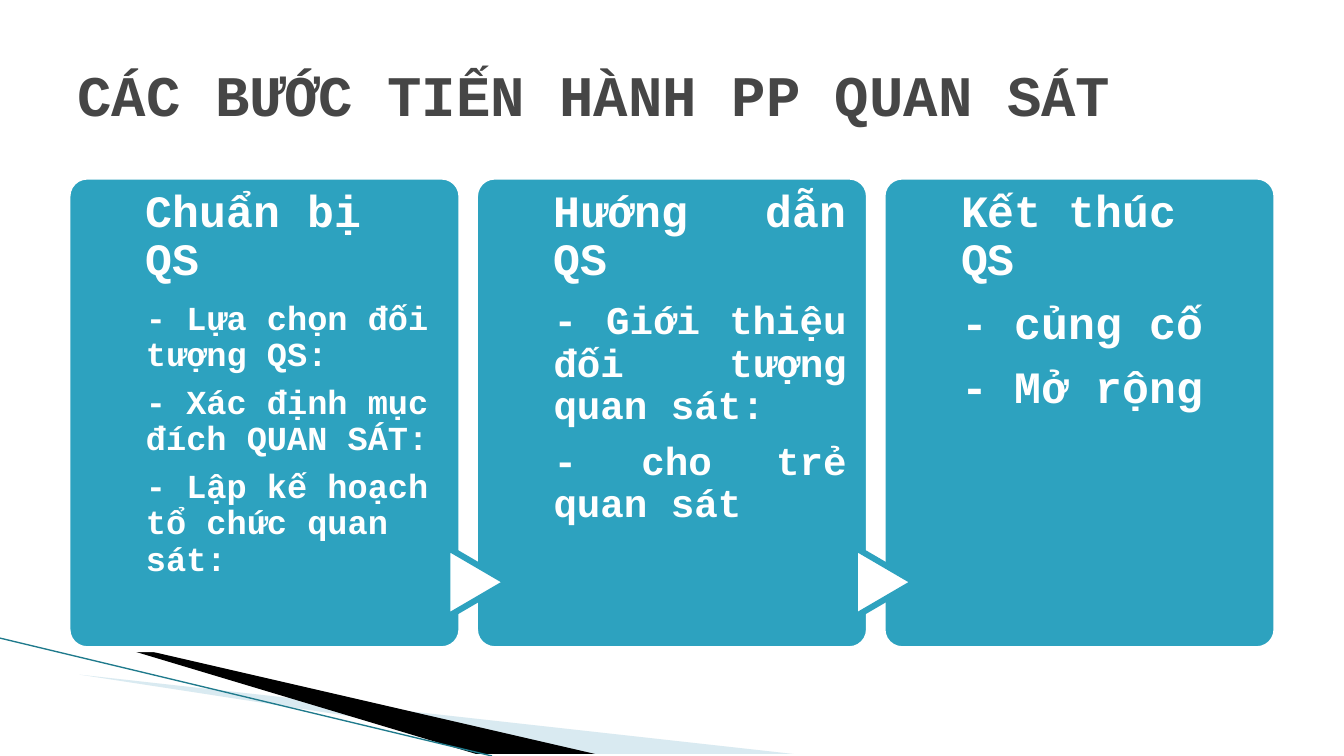
from dataclasses import dataclass
from typing import Optional

from lxml.etree import SubElement
from pptx import Presentation
from pptx.dml.color import RGBColor
from pptx.enum.shapes import MSO_CONNECTOR, MSO_SHAPE
from pptx.enum.text import MSO_ANCHOR, MSO_AUTO_SIZE, PP_ALIGN
from pptx.oxml.ns import qn
from pptx.util import Cm, Pt

FONT = "Courier New"
TEAL, WHITE, GREY = "2DA2BF", "FFFFFF", "464646"
CARD_LEFT, CARD_TOP, CARD_W, CARD_H = 1.7, 4.45, 9.93, 11.91
CARD_PITCH = 10.27


@dataclass
class Step:
    heading: str
    items: list[str]
    item_size: int
    align: PP_ALIGN = PP_ALIGN.LEFT


@dataclass
class Swoosh:
    points: list[tuple[float, float]]
    color: str
    opacity: Optional[int] = None


STEPS = [
    Step("Chuẩn bị QS",
         ["- Lựa chọn đối tượng QS:", "- Xác định mục đích QUAN SÁT:",
          "- Lập kế hoạch tổ chức quan sát:"], 24),
    Step("Hướng dẫn QS",
         ["- Giới thiệu đối tượng quan sát:", "- cho trẻ quan sát"], 28, PP_ALIGN.JUSTIFY),
    Step("Kết thúc QS", ["- củng cố", "- Mở rộng"], 32),
]
SWOOSHES = [
    Swoosh([(1.85, 16.52), (20.1, 19.05), (15.44, 19.05)], "A0CBDC", 40),
    Swoosh([(1.8, 16.48), (15.4, 19.05), (12.5, 19.05)], "000000"),
]


def rgb(color: str) -> RGBColor:
    return RGBColor.from_string(color)


def add_run(p, text: str, size: float, color: str) -> None:
    r = p.add_run()
    r.text = text
    r.font.name = FONT
    r.font.size = Pt(size)
    r.font.bold = True
    r.font.color.rgb = rgb(color)


def paint(sp, fill: str, line: Optional[str] = None) -> None:
    sp.shadow.inherit = False
    sp.fill.solid()
    sp.fill.fore_color.rgb = rgb(fill)
    if line:
        sp.line.color.rgb = rgb(line)
        sp.line.width = Pt(4.33)
    else:
        sp.line.fill.background()


def add_swoosh(s, swoosh: Swoosh) -> None:
    builder = s.shapes.build_freeform(*swoosh.points[0], scale=Cm(1))
    builder.add_line_segments(swoosh.points[1:])
    sp = builder.convert_to_shape()
    paint(sp, swoosh.color)
    if swoosh.opacity:
        clr = sp._element.spPr.find(qn("a:solidFill")).find(qn("a:srgbClr"))
        SubElement(clr, qn("a:alpha"), val=str(swoosh.opacity * 1000))


def add_edge_line(s) -> None:
    line = s.shapes.add_connector(MSO_CONNECTOR.STRAIGHT, 0, Cm(16.08), Cm(12.4), Cm(19.05))
    line.line.color.rgb = rgb("1F7A8C")
    line.line.width = Pt(0.95)
    SubElement(line._element.spPr, qn("a:effectLst"))


def add_step(s, index: int, step: Step) -> None:
    """Draw a card, the arrow leading into it, and its text."""
    left = CARD_LEFT + index * CARD_PITCH
    card = s.shapes.add_shape(MSO_SHAPE.ROUNDED_RECTANGLE,
                              Cm(left), Cm(CARD_TOP), Cm(CARD_W), Cm(CARD_H))
    card.adjustments[0] = 0.05
    paint(card, TEAL, WHITE)
    if index:
        arrow = s.shapes.add_shape(MSO_SHAPE.FLOWCHART_EXTRACT,
                                   Cm(left - 0.82), Cm(13.92), Cm(1.75), Cm(1.5))
        arrow.rotation = 90
        paint(arrow, WHITE, TEAL)

    box = s.shapes.add_textbox(Cm(left + 1.98), Cm(CARD_TOP), Cm(7.39), Cm(CARD_H))
    tf = box.text_frame
    tf.word_wrap = True
    tf.margin_left = tf.margin_right = tf.margin_bottom = 0
    tf.margin_top = Cm(0.3)
    lines = [(step.heading, 32)] + [(item, step.item_size) for item in step.items]
    for i, (text, size) in enumerate(lines):
        p = tf.add_paragraph() if i else tf.paragraphs[0]
        p.alignment = step.align
        p.line_spacing = 0.9
        p.space_after = Pt(0.35 * size)
        add_run(p, text, size, WHITE)


def add_title(s, text: str) -> None:
    title = s.shapes.title
    title.left, title.top, title.width, title.height = Cm(1.7), Cm(0.76), Cm(30.48), Cm(3.18)
    tf = title.text_frame
    tf.auto_size = MSO_AUTO_SIZE.NONE
    tf.vertical_anchor = MSO_ANCHOR.MIDDLE
    p = tf.paragraphs[0]
    p.alignment = PP_ALIGN.LEFT
    add_run(p, text, 41, GREY)


def main() -> None:
    prs = Presentation()
    prs.slide_width, prs.slide_height = Cm(33.87), Cm(19.05)
    s = prs.slides.add_slide(prs.slide_layouts.get_by_name("Title Only"))
    for swoosh in SWOOSHES:
        add_swoosh(s, swoosh)
    add_edge_line(s)
    for index, step in enumerate(STEPS):
        add_step(s, index, step)
    add_title(s, "CÁC BƯỚC TIẾN HÀNH PP QUAN SÁT")
    prs.save("out.pptx")


if __name__ == "__main__":
    main()
